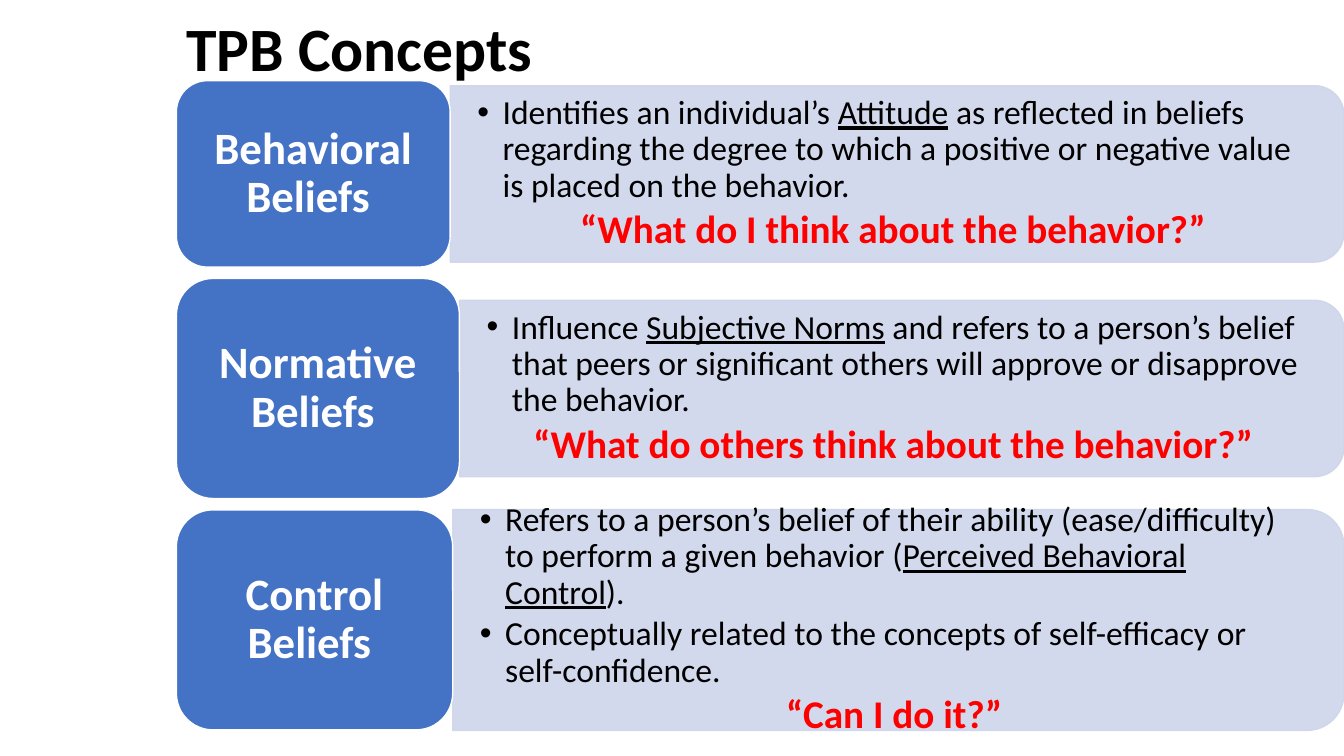
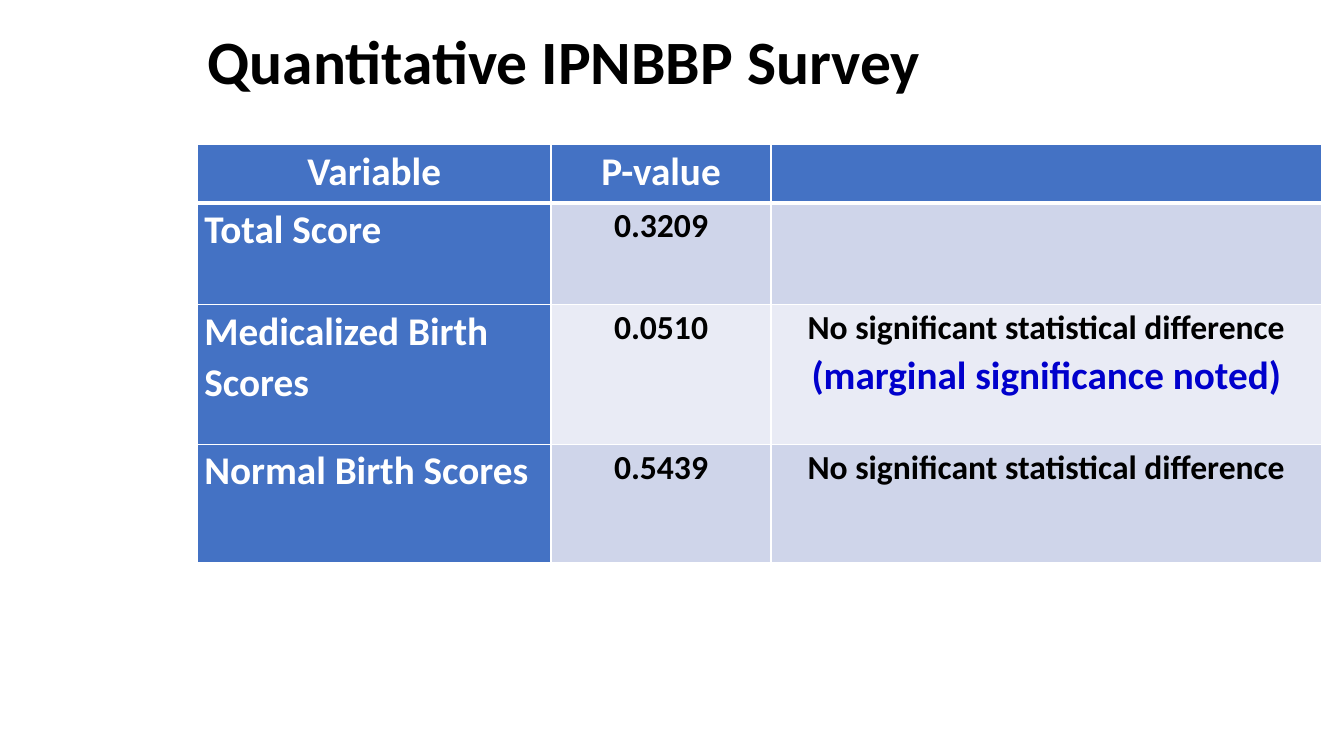
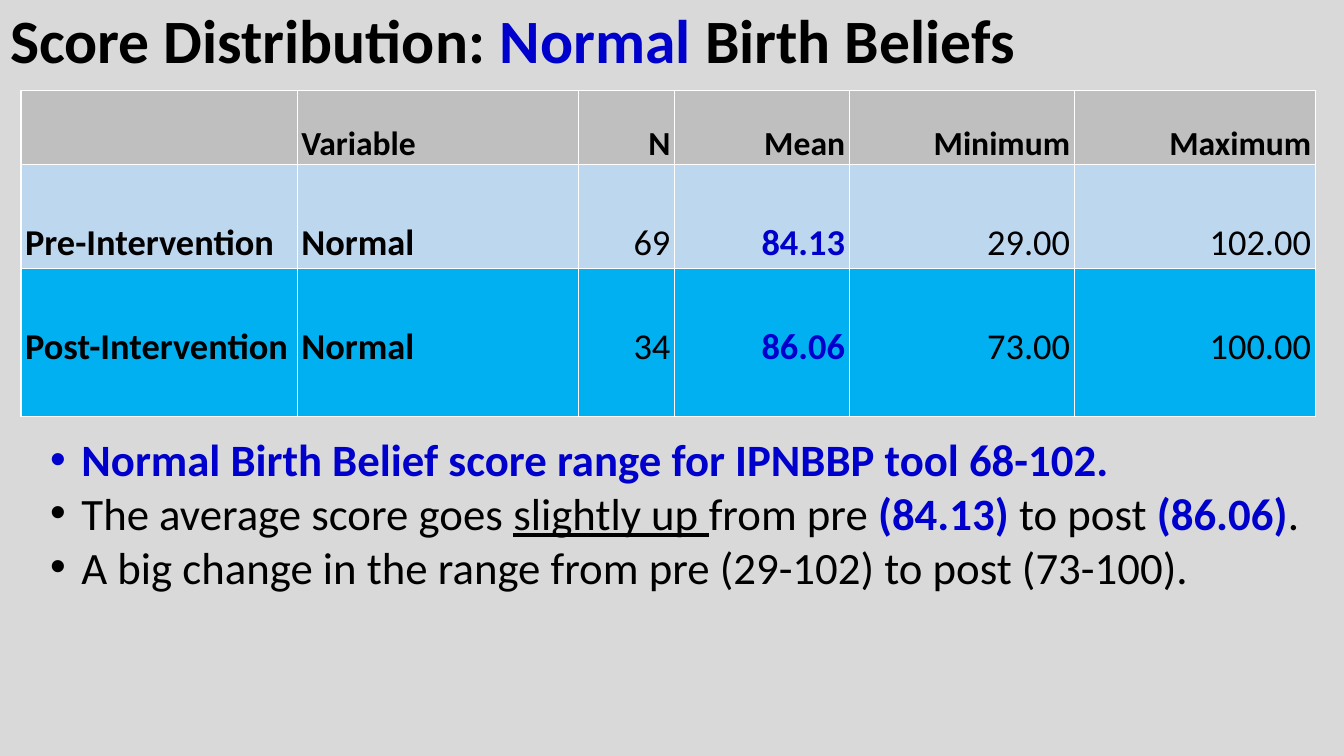
from dataclasses import dataclass
from typing import NamedTuple

from lxml import etree
from pptx import Presentation
from pptx import util as u
from pptx.dml.color import RGBColor
from pptx.enum import shapes, text
from pptx.oxml import ns

# The slide is a grid of 160 columns by 90 rows, twelve to the inch
COLUMNS, ROWS, UNIT = 160, 90, 76200
FONT = "Calibri"
BLACK, WHITE, RED, STRONG_BLUE = "000000", "FFFFFF", "FF0000", "0000CC"
BLUE, PALE, PALER = "4472C4", "CFD5EA", "E9EBF5"
GRAY, LIGHT_GRAY, SKY, CYAN = "BFBFBF", "D9D9D9", "BDD7EE", "00B0F0"
LEFT, CENTER, RIGHT = text.PP_ALIGN.LEFT, text.PP_ALIGN.CENTER, text.PP_ALIGN.RIGHT
TOP, MIDDLE, BOTTOM = (text.MSO_ANCHOR.TOP, text.MSO_ANCHOR.MIDDLE,
                       text.MSO_ANCHOR.BOTTOM)


class Area(NamedTuple):
    left: float
    top: float
    width: float
    height: float

    def lengths(self) -> list:
        return [grid(value) for value in self]


@dataclass
class Span:
    words: str
    color: str = BLACK
    bold: bool = False
    underline: bool = False


@dataclass
class Para:
    spans: list
    size: float
    align: object = LEFT
    indent: float = 0
    line: float = 1.0
    after: float = 0


@dataclass
class Belief:
    label: str
    label_width: float
    label_height: float
    panel_height: float
    points: list
    question: str


@dataclass
class Cell:
    fill: str
    paras: list
    anchor: object = TOP
    top_inset: float = 0


# Shared helpers
def grid(value: float) -> int:
    return round(value * UNIT)


def rgb(color: str) -> RGBColor:
    return RGBColor.from_string(color)


def add_bullet(para, indent: float) -> None:
    props = para._p.get_or_add_pPr()
    props.set("marL", str(u.Inches(indent)))
    props.set("indent", str(-u.Inches(indent)))
    etree.SubElement(props, ns.qn("a:buFont")).set("typeface", "Arial")
    etree.SubElement(props, ns.qn("a:buChar")).set("char", "•")


def write(frame, paras: list, anchor=None, insets: tuple = (0.1, 0.05)) -> None:
    frame.word_wrap = True
    if anchor is not None:
        frame.vertical_anchor = anchor
    frame.margin_left = frame.margin_right = u.Inches(insets[0])
    frame.margin_top = frame.margin_bottom = u.Inches(insets[1])
    fill_paras(frame, paras)


def fill_paras(frame, paras: list) -> None:
    for number, item in enumerate(paras):
        para = frame.add_paragraph() if number else frame.paragraphs[0]
        if item.indent:
            add_bullet(para, item.indent)
        para.alignment = item.align
        para.line_spacing = item.line
        para.space_before = u.Pt(0)
        para.space_after = u.Pt(item.after)
        for span in item.spans:
            run = para.add_run()
            run.text = span.words
            run.font.name, run.font.size = FONT, u.Pt(item.size)
            run.font.bold, run.font.underline = span.bold, span.underline
            run.font.color.rgb = rgb(span.color)


def add_page(deck, area: Area, title: list):
    page = deck.slides.add_slide(deck.slide_layouts[5])
    box = page.shapes.title
    box.left, box.top, box.width, box.height = area.lengths()
    write(box.text_frame, [Para(title, 44, line=0.9)], MIDDLE)
    return page


def add_box(page, area: Area, paras: list, anchor, insets: tuple) -> None:
    box = page.shapes.add_textbox(*area.lengths())
    write(box.text_frame, paras, anchor, insets)


def add_block(page, kind, area: Area, fill: str, line: str):
    block = page.shapes.add_shape(kind, *area.lengths())
    block.shadow.inherit = False
    block.fill.solid()
    block.fill.fore_color.rgb = rgb(fill)
    block.line.color.rgb = rgb(line)
    block.line.width = u.Pt(1)
    return block


def set_borders(cell, top: float, bottom: float) -> None:
    props = cell._tc.get_or_add_tcPr()
    widths = {"lnL": 1, "lnR": 1, "lnT": top, "lnB": bottom}
    for place, (name, width) in enumerate(widths.items()):
        line = etree.Element(ns.qn(f"a:{name}"), w=str(u.Pt(width)))
        fill = etree.SubElement(line, ns.qn("a:solidFill"))
        etree.SubElement(fill, ns.qn("a:srgbClr")).set("val", WHITE)
        props.insert(place, line)


def add_grid_table(page, left: float, top: float, widths: list, heights: list,
                   cells: list, side_inset: float, header_rule: float) -> None:
    area = Area(left, top, sum(widths), sum(heights))
    table = page.shapes.add_table(len(heights), len(widths), *area.lengths()).table
    table.first_row = table.horz_banding = False
    for column, width in zip(table.columns, widths):
        column.width = grid(width)
    for row, height in zip(table.rows, heights):
        row.height = grid(height)
    for r, row_cells in enumerate(cells):
        for c, item in enumerate(row_cells):
            cell = table.cell(r, c)
            cell.fill.solid()
            cell.fill.fore_color.rgb = rgb(item.fill)
            cell.vertical_anchor = item.anchor
            cell.margin_left = cell.margin_right = u.Inches(side_inset)
            cell.margin_top, cell.margin_bottom = u.Inches(item.top_inset), 0
            fill_paras(cell.text_frame, item.paras)
            set_borders(cell, header_rule if r == 1 else 1,
                        header_rule if r == 0 else 1)


# Slide 1: three beliefs, each a label with a panel on its right
BELIEFS = [
    Belief("Behavioral Beliefs ", 32.6, 22.2, 21, [[
        Span("Identifies an individual’s "), Span("Attitude", underline=True),
        Span(" as reflected in beliefs regarding the degree to which a positive "
             "or negative value is placed on the behavior.")]],
        "“What do I think about the behavior?”"),
    Belief("Normative Beliefs ", 33.7, 26.2, 21, [[
        Span("Influence "), Span("Subjective Norms", underline=True),
        Span(" and refers to a person’s belief that peers or significant others "
             "will approve or disapprove the behavior.")]],
        "“What do others think about the behavior?” "),
    Belief("Control Beliefs ", 32.9, 26.2, 26.3, [
        [Span("Refers to a person’s belief of their ability (ease/difficulty) to "
              "perform a given behavior ("),
         Span("Perceived Behavioral Control", underline=True), Span(").")],
        [Span("Conceptually related to the concepts of self-efficacy or "
              "self-confidence.")]],
        "“Can I do it?”"),
]


def add_panel(page, area: Area) -> None:
    # Drawn upright, then turned so the rounded corners face right
    upright = Area(area.left + (area.width - area.height) / 2,
                   area.top + (area.height - area.width) / 2,
                   area.height, area.width)
    panel = add_block(page, shapes.MSO_SHAPE.ROUND_2_SAME_RECTANGLE, upright,
                      PALE, PALE)
    panel.rotation = 90
    for color in panel._element.spPr.iter(ns.qn("a:srgbClr")):
        etree.SubElement(color, ns.qn("a:alpha")).set("val", "90000")


def add_belief(page, belief: Belief, top: float) -> None:
    label_left = 21
    panel_left = label_left + belief.label_width
    panel_top = top + (belief.label_height - belief.panel_height) / 2
    panel = Area(panel_left, panel_top, COLUMNS - panel_left, belief.panel_height)
    add_panel(page, panel)
    paras = [Para(point, 24, indent=0.25, line=0.9, after=4)
             for point in belief.points]
    paras.append(Para([Span(belief.question, RED, True)], 28, CENTER,
                      line=0.9, after=4))
    add_box(page, panel._replace(width=panel.width - 1), paras, MIDDLE, (0.27, 0))
    label = add_block(page, shapes.MSO_SHAPE.ROUNDED_RECTANGLE,
                      Area(label_left, top, belief.label_width,
                           belief.label_height), BLUE, WHITE)
    write(label.text_frame, [Para([Span(belief.label, WHITE, True)], 32, CENTER,
                                  line=0.9)], MIDDLE, (0.23, 0.17))


def build_concepts(deck) -> None:
    page = add_page(deck, Area(21, 0.2, 126, 11.8),
                    [Span("TPB Concepts", bold=True)])
    top, gap = 9.6, 1.35
    for belief in BELIEFS:
        add_belief(page, belief, top)
        top += belief.label_height + gap


# Slide 2: p-values by variable
def survey_para(words: str, size: float, color: str, align=CENTER) -> Para:
    return Para([Span(words, color, True)], size, align, line=1.07)


def build_survey(deck) -> None:
    page = add_page(deck, Area(23.5, 3.7, 123.7, 7.9),
                    [Span("Quantitative IPNBBP Survey", bold=True)])
    same = survey_para("No significant statistical difference", 24, BLACK)
    marginal = survey_para("(marginal significance noted)", 28, STRONG_BLUE)
    results = [("Total Score", "0.3209", PALE, []),
               ("Medicalized Birth Scores", "0.0510", PALER, [same, marginal]),
               ("Normal Birth Scores", "0.5439", PALE, [same])]
    cells = [[Cell(BLUE, [survey_para("Variable", 28, WHITE)]),
              Cell(BLUE, [survey_para("P-value", 28, WHITE)]),
              Cell(BLUE, [])]]
    for name, value, fill, remarks in results:
        cells.append([Cell(BLUE, [survey_para(name, 28, WHITE, LEFT)]),
                      Cell(fill, [survey_para(value, 24, BLACK)]),
                      Cell(fill, remarks)])
    add_grid_table(page, 23.5, 17.2, [42.1, 26.2, 65.5], [6.95, 12.15, 16.6, 14.1],
                   cells, side_inset=0.07, header_rule=3)


# Slide 3: score distribution and findings
def score_cell(words: str, column: int, fill: str, header: bool) -> Cell:
    color = STRONG_BLUE if column == 3 and not header else BLACK
    bold = header or column in (0, 1, 3)
    para = Para([Span(words, color, bold)] if words else [], 24 if header else 26,
                LEFT if column < 2 else RIGHT, line=1.07)
    if header:
        return Cell(fill, [para], BOTTOM)
    return Cell(fill, [para], top_inset=0.53)


def build_scores(deck) -> None:
    page = add_page(deck, Area(0, 0, 138, 10.4), [
        Span("Score Distribution: ", bold=True), Span("Normal ", STRONG_BLUE, True),
        Span("Birth Beliefs", bold=True)])
    page.background.fill.solid()
    page.background.fill.fore_color.rgb = rgb(LIGHT_GRAY)
    scores = [
        (GRAY, ["", "Variable", "N", "Mean", "Minimum", "Maximum"]),
        (SKY, ["Pre-Intervention", "Normal", "69", "84.13", "29.00", "102.00"]),
        (CYAN, ["Post-Intervention", "Normal", "34", "86.06", "73.00", "100.00"]),
    ]
    cells = [[score_cell(words, column, fill, row == 0)
              for column, words in enumerate(line)]
             for row, (fill, line) in enumerate(scores)]
    add_grid_table(page, 2.5, 10.8, [32.9, 33.5, 11.4, 20.8, 26.8, 28.7],
                   [8.8, 12.35, 17.65], cells, side_inset=0.04, header_rule=1)
    findings = [
        [Span("Normal Birth Belief score range for IPNBBP tool 68-102.",
              STRONG_BLUE, True)],
        [Span("The average score goes "), Span("slightly up ", underline=True),
         Span("from pre "), Span("(84.13) ", STRONG_BLUE, True), Span("to post "),
         Span("(86.06)", STRONG_BLUE, True), Span(".")],
        [Span("A big change in the range from pre (29-102) to post (73-100).")],
    ]
    add_box(page, Area(4.8, 50.8, 151.9, 25.4),
            [Para(spans, 32, indent=0.31) for spans in findings], TOP, (0.1, 0.05))


def main() -> None:
    deck = Presentation()
    deck.slide_width, deck.slide_height = grid(COLUMNS), grid(ROWS)
    build_concepts(deck)
    build_survey(deck)
    build_scores(deck)
    deck.save("out.pptx")


if __name__ == "__main__":
    main()
